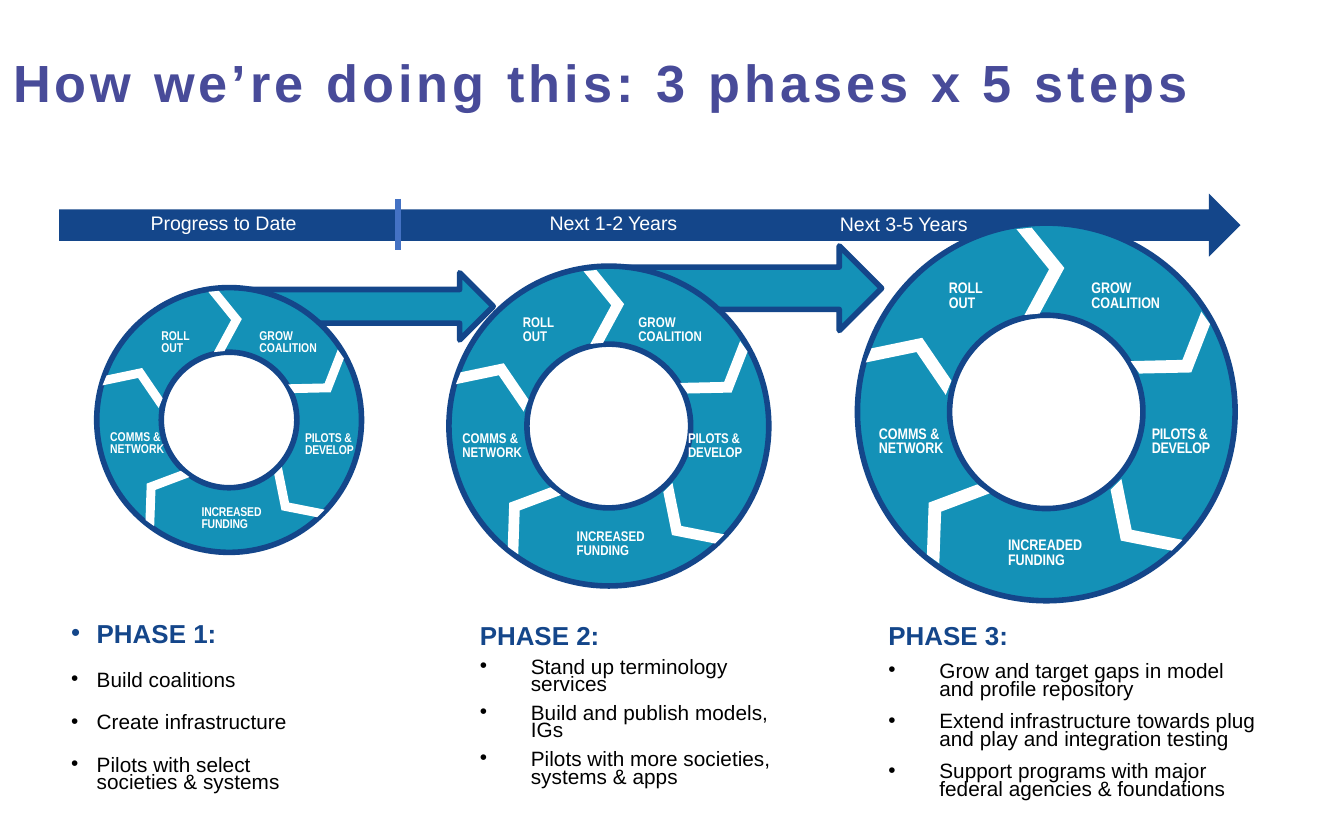
import pptx
import pptx.util
import pptx.dml.color
import pptx.enum.shapes
import pptx.enum.text
import pptx.oxml.ns
from lxml import etree

Inches = pptx.util.Inches
Pt = pptx.util.Pt
Shape = pptx.enum.shapes.MSO_SHAPE
Align = pptx.enum.text.PP_ALIGN
Anchor = pptx.enum.text.MSO_ANCHOR
qn = pptx.oxml.ns.qn

COLORS = {
    "navy": "14468A",
    "teal": "1491B7",
    "white": "FFFFFF",
    "black": "000000",
    "title": "484B99",
    "tick": "4472C4",
}
BASE = 1.97
NOTCHES = [
    (0.18, 0.48, 292),
    (1.34, 1.35, 134.9),
    (1.56, 0.46, 55),
    (0.35, 1.3, 215.7),
    (0.85, 0.02, 354.7),
]
RINGS = [
    (0.72, 2.14, 1.97, 6.8, [
        (1.2, 2.46, 0.68, "ROLL\nOUT", 0),
        (1.93, 2.46, 0.68, "GROW\nCOALITION", 0),
        (2.27, 3.22, 0.68, "PILOTS &\nDEVELOP", -0.1),
        (1.5, 3.77, 0.68, "INCREASED\nFUNDING", -0.1),
        (0.82, 3.21, 0.68, "COMMS &\nNETWORK", 0),
    ]),
    (3.34, 1.98, 2.38, 7.5, [
        (3.89, 2.36, 0.68, "ROLL\nOUT", 0),
        (4.75, 2.36, 0.68, "GROW\vCOALITION", 0),
        (5.12, 3.22, 0.68, "PILOTS & DEVELOP", -0.1),
        (4.29, 3.95, 0.81, "INCREASED\nFUNDING", 0),
        (3.44, 3.22, 0.68, "COMMS &\nNETWORK", 0),
    ]),
    (6.38, 1.66, 2.81, 8.2, [
        (7.06, 2.1, 0.68, "ROLL\nOUT", 0),
        (8.12, 2.1, 0.68, "GROW\vCOALITION", 0),
        (8.57, 3.18, 0.77, "PILOTS & DEVELOP", -0.1),
        (7.5, 4.01, 0.81, "INCREADED\nFUNDING", 0),
        (6.54, 3.18, 0.68, "COMMS &\nNETWORK", 0),
    ]),
]
PHASES = [
    (0.53, 4.66, 2.34, "PHASE 1:", 0.19, 7.5, True, [
        "Build coalitions",
        "Create infrastructure",
        "Pilots with select \vsocieties & systems",
    ]),
    (3.57, 4.67, 2.34, "PHASE 2:", 0.38, 0, False, [
        "Stand up terminology services",
        "Build and publish models, IGs",
        "Pilots with more societies, systems & apps",
    ]),
    (6.61, 4.67, 2.74, "PHASE 3:", 0.38, 2.2, False, [
        "Grow and target gaps in model and profile repository",
        "Extend infrastructure towards plug and play and integration testing",
        "Support programs with major federal agencies & foundations",
    ]),
]
TIMES = [
    (4.01, 1.53, 2.14, "Next 1-2 Years", Align.LEFT),
    (0.9, 1.53, 1.53, "Progress to Date", Align.CENTER),
    (6.17, 1.54, 2.14, "Next 3-5 Years", Align.LEFT),
]


class Deck:
    def __init__(self, slide):
        self.slide = slide
        self.font = "Arial"
        self.edge = 3

    def color(self, name):
        return pptx.dml.color.RGBColor.from_string(COLORS[name])

    def shape(self, kind, x, y, w, h, fill, line=None, turn=0, adj=None):
        item = self.slide.shapes.add_shape(kind, Inches(x), Inches(y), Inches(w), Inches(h))
        item.shadow.inherit = False
        item.fill.solid()
        item.fill.fore_color.rgb = self.color(fill)
        if line:
            item.line.color.rgb = self.color(line)
            item.line.width = Pt(self.edge)
        else:
            item.line.fill.background()
        if adj is not None:
            item.adjustments[0] = adj
        item.rotation = turn

    def line(self, x, top, end, color):
        item = self.slide.shapes.add_connector(
            pptx.enum.shapes.MSO_CONNECTOR.STRAIGHT, Inches(x), Inches(top), Inches(x), Inches(end))
        item.line.color.rgb = self.color(color)
        item.line.width = Pt(self.edge)
        etree.SubElement(item._element.spPr, qn("a:effectLst"))

    def box(self, x, y, w, h, pad=(0, 0), anchor=Anchor.TOP):
        frame = self.slide.shapes.add_textbox(Inches(x), Inches(y), Inches(w), Inches(h)).text_frame
        frame.word_wrap = True
        frame.vertical_anchor = anchor
        frame.margin_left = frame.margin_right = Inches(pad[0])
        frame.margin_top = frame.margin_bottom = Inches(pad[1])
        return frame

    def para(self, frame, text, size, color, bold=False, font=None, gap=1.0,
             before=0, after=0, dent=0, space=0, align=Align.LEFT):
        first = not frame.paragraphs[0].runs
        para = frame.paragraphs[0] if first else frame.add_paragraph()
        para.alignment = align
        para.line_spacing = gap
        para.space_before = Pt(0 if first else before)
        para.space_after = Pt(after)
        if dent:
            props = para._p.get_or_add_pPr()
            props.set("marL", str(Inches(dent)))
            props.set("indent", str(-Inches(dent)))
            etree.SubElement(props, qn("a:buFont")).set("typeface", self.font)
            etree.SubElement(props, qn("a:buChar")).set("char", "•")
        for index, part in enumerate(text.split("\v")):
            if index:
                para.add_line_break()
            run = para.add_run()
            run.text = part
            run.font.name = font or self.font
            run.font.size = Pt(size)
            run.font.bold = bold
            run.font.color.rgb = self.color(color)
            if space:
                run._r.get_or_add_rPr().set("spc", str(round(space * 100)))

    def title(self, text):
        frame = self.box(0, 0.03, 10, 1.21, (0.1, 0.05), Anchor.MIDDLE)
        self.para(frame, text, 28, "title", True, gap=0.9, space=2.2)

    def time(self, x, y, w, text, align):
        self.para(self.box(x, y, w, 0.31, (0.08, 0.04)), text, 10.5, "white", align=align)

    def ring(self, x, y, side):
        self.shape(Shape.DONUT, x, y, side, side, "teal", "navy", adj=0.244)
        scale = side / BASE
        for left, top, turn in NOTCHES:
            self.shape(Shape.CHEVRON, x + left * scale, y + top * scale,
                       0.23 * scale, 0.45 * scale, "white", turn=turn, adj=0.653)

    def label(self, x, y, w, text, space, size):
        frame = self.box(x, y, w, 0.15)
        for row in text.split("\n"):
            self.para(frame, row, size, "white", True, "Arial Narrow", 0.8, space=space)

    def phase(self, x, y, w, head, dent, before, mark, items):
        frame = self.box(x, y, w, 1.33)
        self.para(frame, head, 13.9, "navy", True, gap=0.7, after=6, dent=dent if mark else 0)
        for item in items:
            self.para(frame, item, 11.1, "black", gap=0.7, before=before, after=6, dent=dent)


def main():
    show = pptx.Presentation()
    show.slide_width, show.slide_height = Inches(10), Inches(6.25)
    deck = Deck(show.slides.add_slide(show.slide_layouts[6]))
    deck.shape(Shape.RIGHT_ARROW, 0.44, 1.44, 8.79, 0.47, "navy")
    deck.shape(Shape.RIGHT_ARROW, 4.56, 1.83, 2, 0.63, "teal", "navy")
    deck.shape(Shape.RIGHT_ARROW, 1.67, 2.03, 2, 0.5, "teal", "navy")
    deck.title("How we’re doing this: 3 phases x 5 steps")
    for phase in PHASES:
        deck.phase(*phase)
    deck.line(2.96, 1.48, 1.86, "tick")
    for x, y, side, size, labels in RINGS:
        deck.ring(x, y, side)
        for label in labels:
            deck.label(*label, size)
    for time in TIMES:
        deck.time(*time)
    show.save("out.pptx")


if __name__ == "__main__":
    main()
